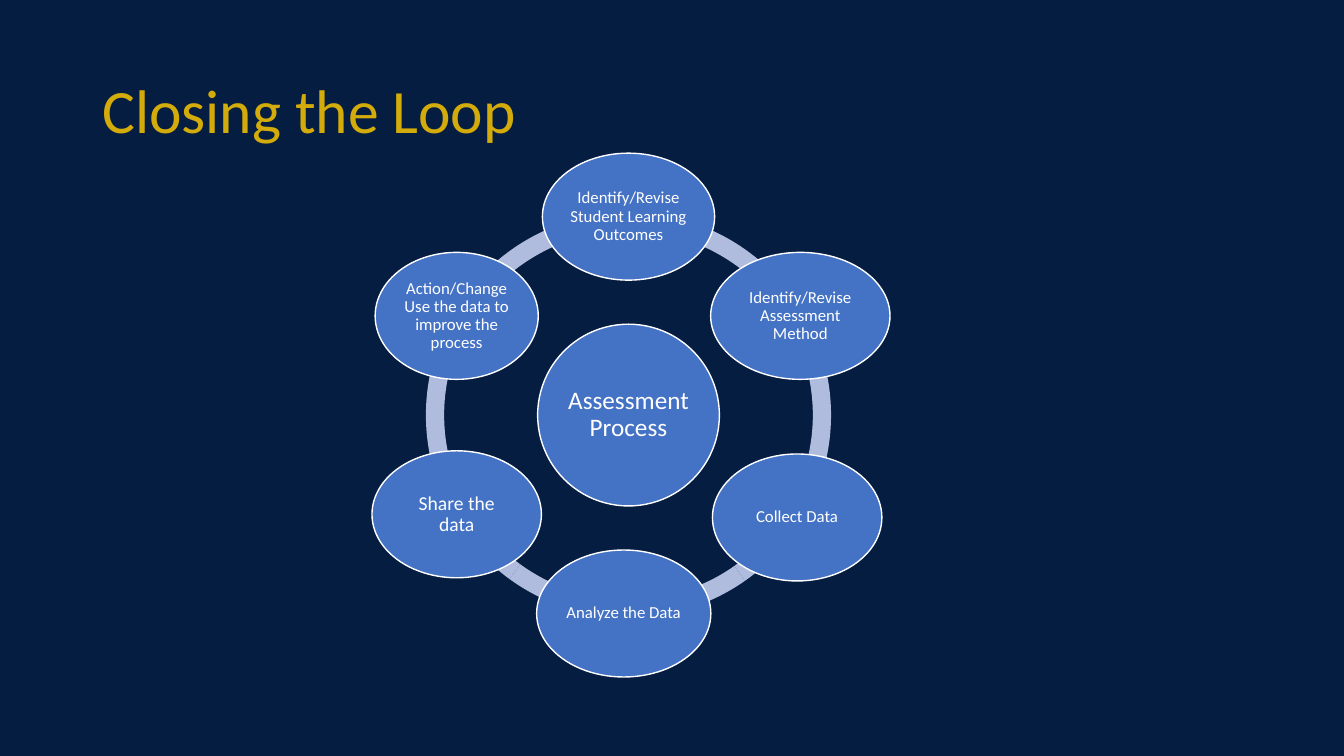
import math

import pptx
import pptx.dml.color
import pptx.enum.shapes
import pptx.enum.text
import pptx.util

Cm = pptx.util.Cm
SHAPES = pptx.enum.shapes.MSO_SHAPE
ALIGN = pptx.enum.text.PP_ALIGN

COLOURS = {
    "background": "051D40",
    "title": "D3AB0A",
    "ring": "B0BCDE",
    "node": "4472C4",
    "white": "FFFFFF",
}
CENTRE_X, CENTRE_Y = 15.84, 10.46
RING_SIZE = 10.21
HUB_SIZE = 4.58
ORBIT = 5
NODE_HEIGHT = 3.2
ARC_ANGLES = [18.8, 54.9, 90, 126, 162, 198]
STEPS = [
    ("Identify/Revise Student Learning Outcomes", 4.34, 12, 0, 0),
    ("Identify/Revise Assessment Method", 4.52, 12, 0, 0),
    ("Collect Data", 4.27, 12, -0.08, 0.08),
    ("Analyze the Data", 4.39, 12, -0.12, 0),
    ("Share the data", 4.27, 14, 0, 0),
    ("Action/Change Use the data to improve the process", 4.11, 12, 0, 0),
]


def colour(name):
    """Return the named colour."""
    return pptx.dml.color.RGBColor.from_string(COLOURS[name])


def write_text(shape, text, size, font_colour="white", align=ALIGN.CENTER, inset=0.05):
    """Fill a shape with one formatted paragraph, centred vertically."""
    frame = shape.text_frame
    frame.word_wrap = True
    frame.vertical_anchor = pptx.enum.text.MSO_ANCHOR.MIDDLE
    frame.margin_left = frame.margin_right = Cm(inset)
    frame.margin_top = frame.margin_bottom = Cm(inset)
    frame.text = text
    paragraph = frame.paragraphs[0]
    paragraph.alignment = align
    paragraph.line_spacing = 0.9
    paragraph.font.name = "Calibri"
    paragraph.font.size = pptx.util.Pt(size)
    paragraph.font.color.rgb = colour(font_colour)


def add_centred_shape(slide, kind, x, y, width, height, fill):
    """Add a flat preset shape around a centre point."""
    shape = slide.shapes.add_shape(
        kind, Cm(x - width / 2), Cm(y - height / 2), Cm(width), Cm(height)
    )
    shape.shadow.inherit = False
    shape.fill.solid()
    shape.fill.fore_color.rgb = colour(fill)
    shape.line.fill.background()
    return shape


def add_arc(slide, start, end):
    """Add one section of the ring between two angles in degrees."""
    arc = add_centred_shape(
        slide, SHAPES.BLOCK_ARC, CENTRE_X, CENTRE_Y, RING_SIZE, RING_SIZE, "ring"
    )
    arc.adjustments[0] = start * 0.6
    arc.adjustments[1] = end * 0.6
    arc.adjustments[2] = 0.045


def add_node(slide, text, x, y, width, height, size):
    """Add an outlined ellipse with its label."""
    node = add_centred_shape(slide, SHAPES.OVAL, x, y, width, height, "node")
    node.line.color.rgb = colour("white")
    node.line.width = pptx.util.Pt(1)
    write_text(node, text, size)


def add_title(slide, text):
    """Place and format the title."""
    title = slide.shapes.title
    title.left, title.top = Cm(2.33), Cm(1.02)
    title.width, title.height = Cm(29.21), Cm(3.68)
    write_text(title, text, 44, font_colour="title", align=ALIGN.LEFT, inset=0.25)


def main():
    """Build the assessment cycle slide."""
    presentation = pptx.Presentation()
    presentation.slide_width, presentation.slide_height = Cm(33.87), Cm(19.05)
    slide = presentation.slides.add_slide(presentation.slide_layouts[5])
    slide.background.fill.solid()
    slide.background.fill.fore_color.rgb = colour("background")

    add_title(slide, "Closing the Loop")
    for start, end in zip(ARC_ANGLES, ARC_ANGLES[1:] + ARC_ANGLES[:1]):
        add_arc(slide, start, end)
    add_node(slide, "Assessment Process", CENTRE_X, CENTRE_Y, HUB_SIZE, HUB_SIZE, 18)
    for index, (text, width, size, shift_x, shift_y) in enumerate(STEPS):
        angle = math.radians(60 * index)
        x = CENTRE_X + ORBIT * math.sin(angle) + shift_x
        y = CENTRE_Y - ORBIT * math.cos(angle) + shift_y
        add_node(slide, text, x, y, width, NODE_HEIGHT, size)

    presentation.save("out.pptx")


if __name__ == "__main__":
    main()
